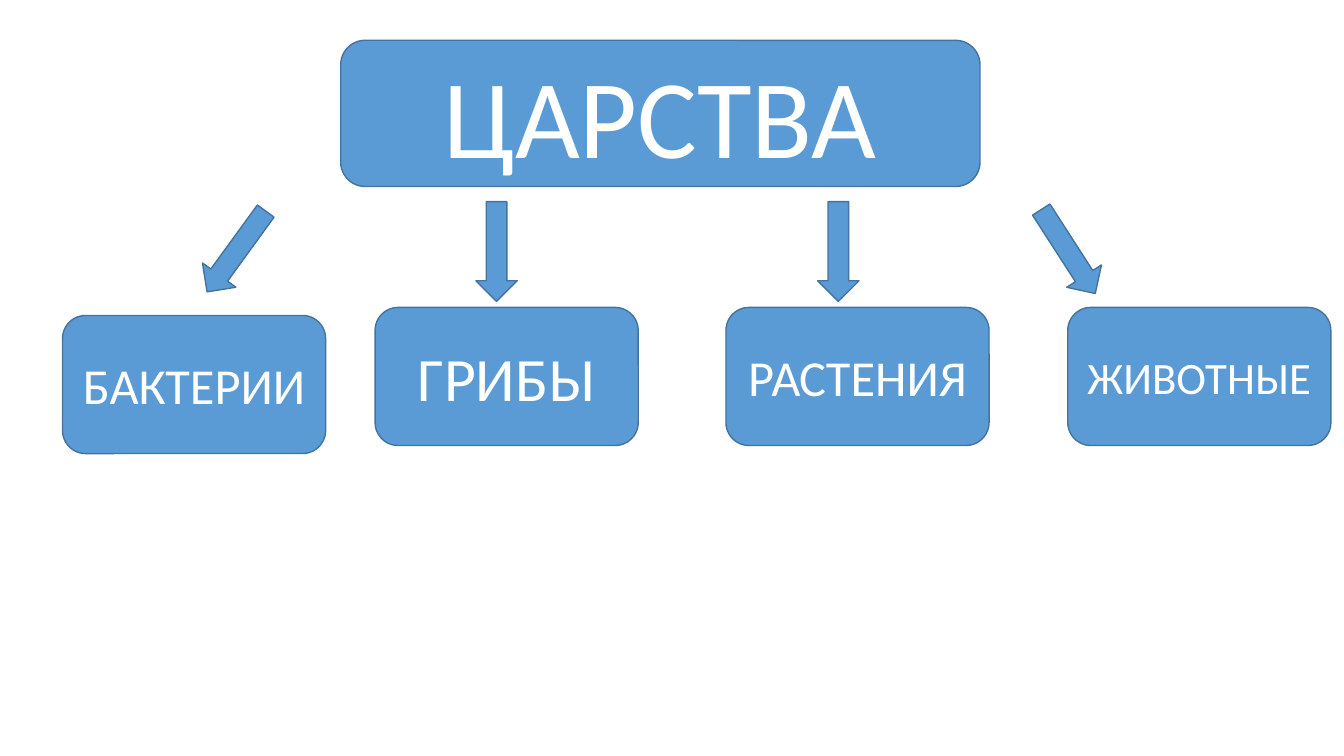
from pptx import Presentation
from pptx.dml.color import RGBColor
from pptx.enum.shapes import MSO_SHAPE as Shape
from pptx.enum.text import MSO_ANCHOR as Anchor, PP_ALIGN as Align
from pptx.util import Inches, Pt

# Content: heading, then kingdoms as
# (name, text size, box left, box top, arrow left, arrow rotation)
HEADING = ("ЦАРСТВА", 80)
KINGDOMS = [
    ("БАКТЕРИИ", 36, 0.62, 3.13, 2.14, 36),
    ("ГРИБЫ", 44, 3.72, 3.05, 4.72, 0),
    ("РАСТЕНИЯ", 36, 7.2, 3.05, 8.11, 0),
    ("ЖИВОТНЫЕ", 32, 10.59, 3.05, 10.39, 327.2),
]

# Sizes in inches
SLIDE_SIZE = (13.33, 7.5)
HEADING_AREA = (3.38, 0.4, 6.34, 1.45)
KINGDOM_SIZE = (2.61, 1.37)
ARROW_TOP = 2
ARROW_SIZE = (0.41, 0.99)

FONT = "Calibri"
BLUE = RGBColor(0x5B, 0x9B, 0xD5)
OUTLINE = RGBColor(0x43, 0x73, 0x9E)
WHITE = RGBColor(0xFF, 0xFF, 0xFF)


def add_blue_shape(slide, preset, area):
    shape = slide.shapes.add_shape(preset, *(Inches(length) for length in area))
    shape.shadow.inherit = False
    shape.fill.solid()
    shape.fill.fore_color.rgb = BLUE
    shape.line.color.rgb = OUTLINE
    shape.line.width = Pt(1)
    return shape


def add_box(slide, label, size, area):
    frame = add_blue_shape(slide, Shape.ROUNDED_RECTANGLE, area).text_frame
    frame.text = label
    frame.word_wrap = True
    frame.vertical_anchor = Anchor.MIDDLE
    paragraph = frame.paragraphs[0]
    paragraph.alignment = Align.CENTER
    font = paragraph.runs[0].font
    font.name = FONT
    font.size = Pt(size)
    font.color.rgb = WHITE


def main():
    deck = Presentation()
    deck.slide_width, deck.slide_height = (Inches(side) for side in SLIDE_SIZE)
    slide = deck.slides.add_slide(deck.slide_layouts[6])

    # Heading
    add_box(slide, *HEADING, HEADING_AREA)

    # Arrows and the kingdoms they lead to
    for name, size, left, top, arrow_left, rotation in KINGDOMS:
        arrow_area = (arrow_left, ARROW_TOP, *ARROW_SIZE)
        arrow = add_blue_shape(slide, Shape.DOWN_ARROW, arrow_area)
        arrow.rotation = rotation
        add_box(slide, name, size, (left, top, *KINGDOM_SIZE))

    deck.save("out.pptx")


if __name__ == "__main__":
    main()
